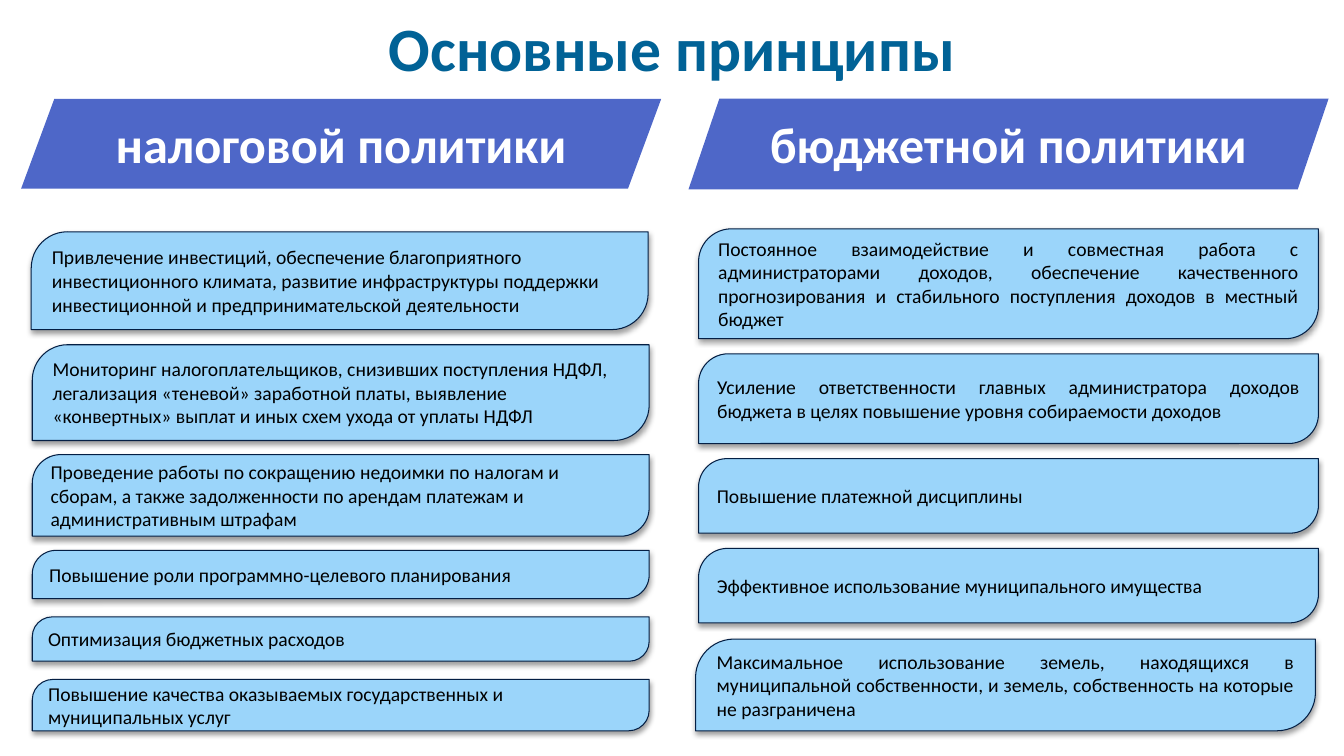
"""Build the slide on the principles of tax and budget policy."""
from lxml import etree
from pptx import Presentation
from pptx import util as u
from pptx.dml.color import RGBColor
from pptx.enum import shapes, text
from pptx.oxml.ns import qn

CELL = u.Inches(0.1)
COLS, ROWS = 133.33, 75
FONT = "Calibri"
COLORS = {
    "title": "016296",
    "banner": "4E67C8",
    "card": "9BD5FA",
    "outline": "041F44",
    "light": "FFFFFF",
    "dark": "000000",
}
TITLE = "Основные принципы"
BANNER_TOP, BANNER_WIDTH = 9.8, 63.5
COLUMNS = [
    {
        "heading": "налоговой политики",
        "banner": (2.1, 8.9, 0.37),
        "width": 61.2,
        "align": text.PP_ALIGN.LEFT,
        "cards": [
            (3.1, 23.0, 9.7, 0.37, "Привлечение инвестиций, обеспечение благоприятного "
             "инвестиционного климата, развитие инфраструктуры поддержки "
             "инвестиционной и предпринимательской деятельности"),
            (3.2, 34.2, 9.5, 0.37, "Мониторинг налогоплательщиков, снизивших поступления "
             "НДФЛ, легализация «теневой» заработной платы, выявление «конвертных» "
             "выплат и иных схем ухода от уплаты НДФЛ"),
            (3.2, 45.1, 8.1, 0.35, "Проведение работы по сокращению недоимки по налогам "
             "и сборам, а также задолженности по арендам платежам и "
             "административным штрафам"),
            (3.2, 54.6, 4.8, 0.49, "Повышение роли программно-целевого планирования"),
            (3.2, 61.2, 4.4, 0.45, "Оптимизация бюджетных расходов"),
            (3.2, 67.4, 5.1, 0.4, "Повышение качества оказываемых государственных "
             "и муниципальных услуг"),
        ],
    },
    {
        "heading": "бюджетной политики",
        "banner": (68.3, 9.0, 0.34),
        "width": 61.5,
        "align": text.PP_ALIGN.JUSTIFY,
        "cards": [
            (69.3, 22.7, 10.9, 0.3, "Постоянное взаимодействие и совместная работа с "
             "администраторами доходов, обеспечение качественного прогнозирования "
             "и стабильного поступления доходов в местный бюджет"),
            (69.3, 35.1, 8.9, 0.33, "Усиление ответственности главных администратора "
             "доходов бюджета в целях повышение уровня собираемости доходов"),
            (69.3, 45.5, 7.4, 0.38, "Повышение платежной дисциплины"),
            (69.3, 54.4, 7.4, 0.39, "Эффективное использование муниципального имущества"),
            (69.0, 63.4, 9.1, 0.42, "Максимальное использование земель, находящихся в "
             "муниципальной собственности, и земель, собственность на которые "
             "не разграничена"),
        ],
    },
]


def cells(*counts):
    """Turn counts of grid cells into lengths."""
    return [u.Emu(round(n * CELL)) for n in counts]


def rgb(name):
    """Look up a colour of the palette."""
    return RGBColor.from_string(COLORS[name])


def write(sp, words, size, color, align, bold=False):
    """Put one formatted paragraph into a shape."""
    tf = sp.text_frame
    tf.text = words
    p = tf.paragraphs[0]
    p.alignment = align
    font = p.runs[0].font
    font.name, font.size, font.bold = FONT, u.Pt(size), bold
    font.color.rgb = rgb(color)
    return tf


def add_title(s, words):
    """Place and format the slide title."""
    sp = s.shapes.title
    sp.left, sp.top, sp.width, sp.height = cells(37.3, 0.5, 58.8, 8.4)
    tf = write(sp, words, 44, "title", text.PP_ALIGN.CENTER, bold=True)
    tf.word_wrap = False
    tf.auto_size = text.MSO_AUTO_SIZE.SHAPE_TO_FIT_TEXT
    tf.vertical_anchor = text.MSO_ANCHOR.TOP


def add_panel(s, kind, box, fill, corner):
    """Add a filled shape without line or shadow."""
    sp = s.shapes.add_shape(kind, *cells(*box))
    sp.adjustments[0] = corner
    sp.fill.solid()
    sp.fill.fore_color.rgb = rgb(fill)
    sp.line.fill.background()
    sp.shadow.inherit = False
    return sp


def add_shadow(sp):
    """Cast a soft shadow straight down."""
    effects = sp._element.spPr.find(qn("a:effectLst"))
    shadow = etree.SubElement(effects, qn("a:outerShdw"), blurRad=str(u.Pt(4)),
                              dist=str(u.Pt(2)), dir="5400000", rotWithShape="0")
    color = etree.SubElement(shadow, qn("a:srgbClr"), val=COLORS["dark"])
    etree.SubElement(color, qn("a:alpha"), val="38000")


def add_banner(s, left, height, slant, words):
    """Add the slanted heading of a column."""
    sp = add_panel(s, shapes.MSO_SHAPE.PARALLELOGRAM,
                   (left, BANNER_TOP, BANNER_WIDTH, height), "banner", slant)
    tf = write(sp, words, 36, "light", text.PP_ALIGN.CENTER, bold=True)
    tf.vertical_anchor = text.MSO_ANCHOR.TOP
    tf.auto_size = text.MSO_AUTO_SIZE.SHAPE_TO_FIT_TEXT


def add_card(s, box, corner, words, align):
    """Add one principle on a card with two round corners."""
    sp = add_panel(s, shapes.MSO_SHAPE.ROUND_2_DIAG_RECTANGLE, box, "card", corner)
    sp.line.color.rgb = rgb("outline")
    sp.line.width = u.Pt(0.75)
    add_shadow(sp)
    tf = write(sp, words, 14, "dark", align)
    tf.vertical_anchor = text.MSO_ANCHOR.MIDDLE


def main():
    """Build and save the slide."""
    prs = Presentation()
    prs.slide_width, prs.slide_height = cells(COLS, ROWS)
    s = prs.slides.add_slide(prs.slide_layouts[5])
    add_title(s, TITLE)
    for column in COLUMNS:
        add_banner(s, *column["banner"], column["heading"])
        for left, top, height, corner, words in column["cards"]:
            box = (left, top, column["width"], height)
            add_card(s, box, corner, words, column["align"])
    prs.save("out.pptx")


if __name__ == "__main__":
    main()
